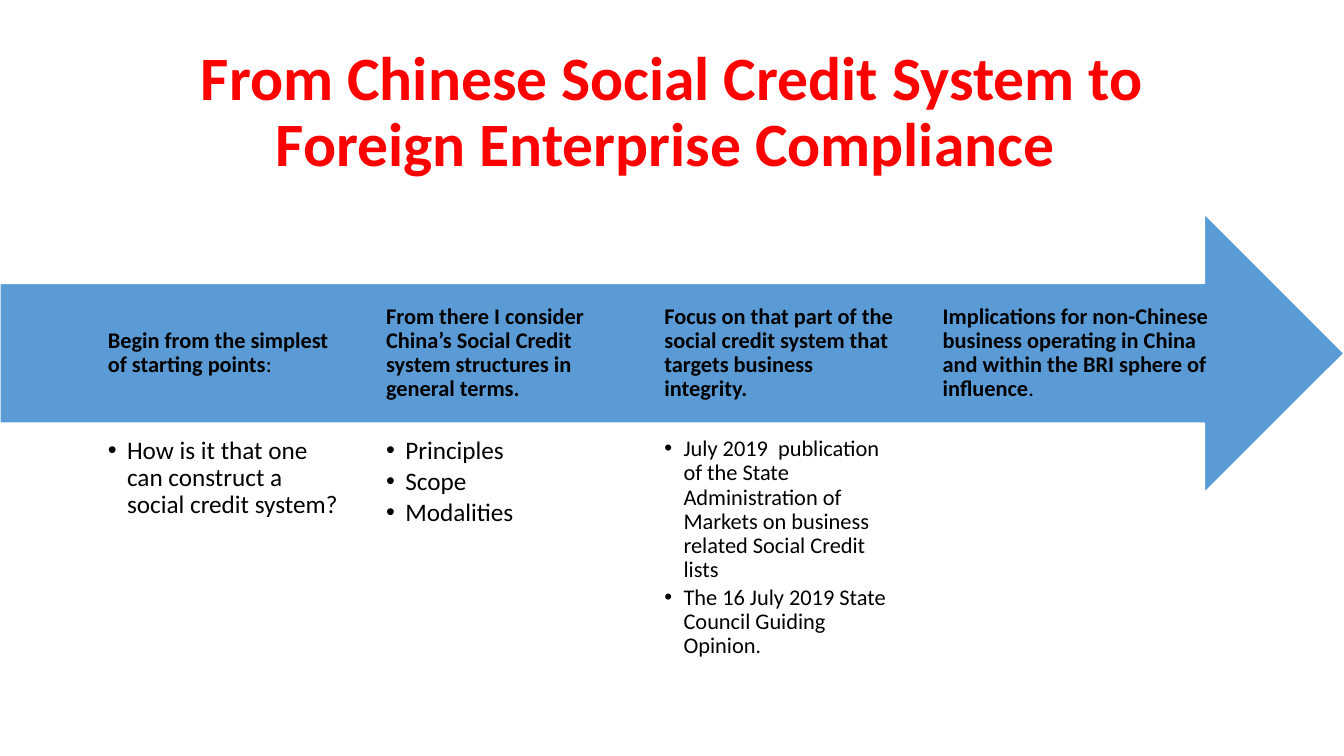
from lxml import etree
from pptx import Presentation
from pptx import util as u
from pptx.dml.color import RGBColor
from pptx.enum import shapes, text
from pptx.oxml.ns import qn

PX = 9144


def rgb(h):
    return RGBColor.from_string(h)


def add_run(p, words, size, color="000000", bold=False):
    r = p.add_run()
    r.text = words
    r.font.name = "Calibri"
    r.font.size = u.Pt(size)
    r.font.bold = bold
    r.font.color.rgb = rgb(color)


prs = Presentation()
prs.slide_width, prs.slide_height = 1333 * PX, 750 * PX
s = prs.slides.add_slide(prs.slide_layouts[5])

title = s.shapes.title
title.left, title.top, title.width, title.height = [n * PX for n in (92, 40, 1150, 145)]
tf = title.text_frame
tf.word_wrap = True
tf.auto_size = text.MSO_AUTO_SIZE.NONE
tf.vertical_anchor = text.MSO_ANCHOR.MIDDLE
p = tf.paragraphs[0]
p.alignment = text.PP_ALIGN.CENTER
p.line_spacing = 0.9
add_run(p, "From Chinese Social Credit System to Foreign Enterprise Compliance ", 44, "FF0000", True)

arrow = s.shapes.add_shape(shapes.MSO_SHAPE.RIGHT_ARROW, 0, 212 * PX, 1333 * PX, 277 * PX)
arrow.shadow.inherit = False
arrow.fill.solid()
arrow.fill.fore_color.rgb = rgb("5B9BD5")
arrow.line.color.rgb = rgb("FFFFFF")
arrow.line.width = u.Pt(1)

steps = [
    (230, "Begin from the simplest of starting points", ":", 18, 227,
     [[("How is it that one can construct a social credit system?", 18)]]),
    (230, "From there I consider China’s Social Credit system structures in general terms.", "", 18, 227,
     [[("Principles", 18)], [("Scope", 18)], [("Modalities", 18)]]),
    (230, "Focus on that part of the social credit system that targets business integrity.", "", 16, 304,
     [[("July 2019  publication of the State Administration of Markets on business related Social Credit lists", 16)],
      [("The 16 July 2019 State Council Guiding Opinion", 16), (".", 15)]]),
    (265, "Implications for non-Chinese business operating in China and within the BRI sphere of influence",
     ".", 16, 0, []),
]

for i, (width, heading, ending, size, list_height, points) in enumerate(steps):
    left = 107 + 276 * i
    sp = s.shapes.add_textbox(left * PX, 281 * PX, width * PX, 139 * PX)
    tf = sp.text_frame
    tf.word_wrap = True
    tf.vertical_anchor = text.MSO_ANCHOR.MIDDLE
    tf.margin_left = tf.margin_right = 0
    tf.margin_top = tf.margin_bottom = 18 * PX
    p = tf.paragraphs[0]
    p.line_spacing = 0.9
    add_run(p, heading, 16, bold=True)
    if ending:
        add_run(p, ending, 16)

    if not points:
        continue
    sp = s.shapes.add_textbox(left * PX, 434 * PX, width * PX, list_height * PX)
    tf = sp.text_frame
    tf.word_wrap = True
    tf.margin_left = tf.margin_right = tf.margin_top = tf.margin_bottom = 0
    for n, point in enumerate(points):
        p = tf.add_paragraph() if n else tf.paragraphs[0]
        pPr = p._p.get_or_add_pPr()
        pPr.set("marL", str(19 * PX))
        pPr.set("indent", str(-19 * PX))
        etree.SubElement(pPr, qn("a:buFont")).set("typeface", "Arial")
        etree.SubElement(pPr, qn("a:buChar")).set("char", "•")
        p.level = 1
        p.line_spacing = 0.9
        p.space_after = u.Pt(0.15 * size)
        for words, run_size in point:
            add_run(p, words, run_size)

prs.save("out.pptx")
